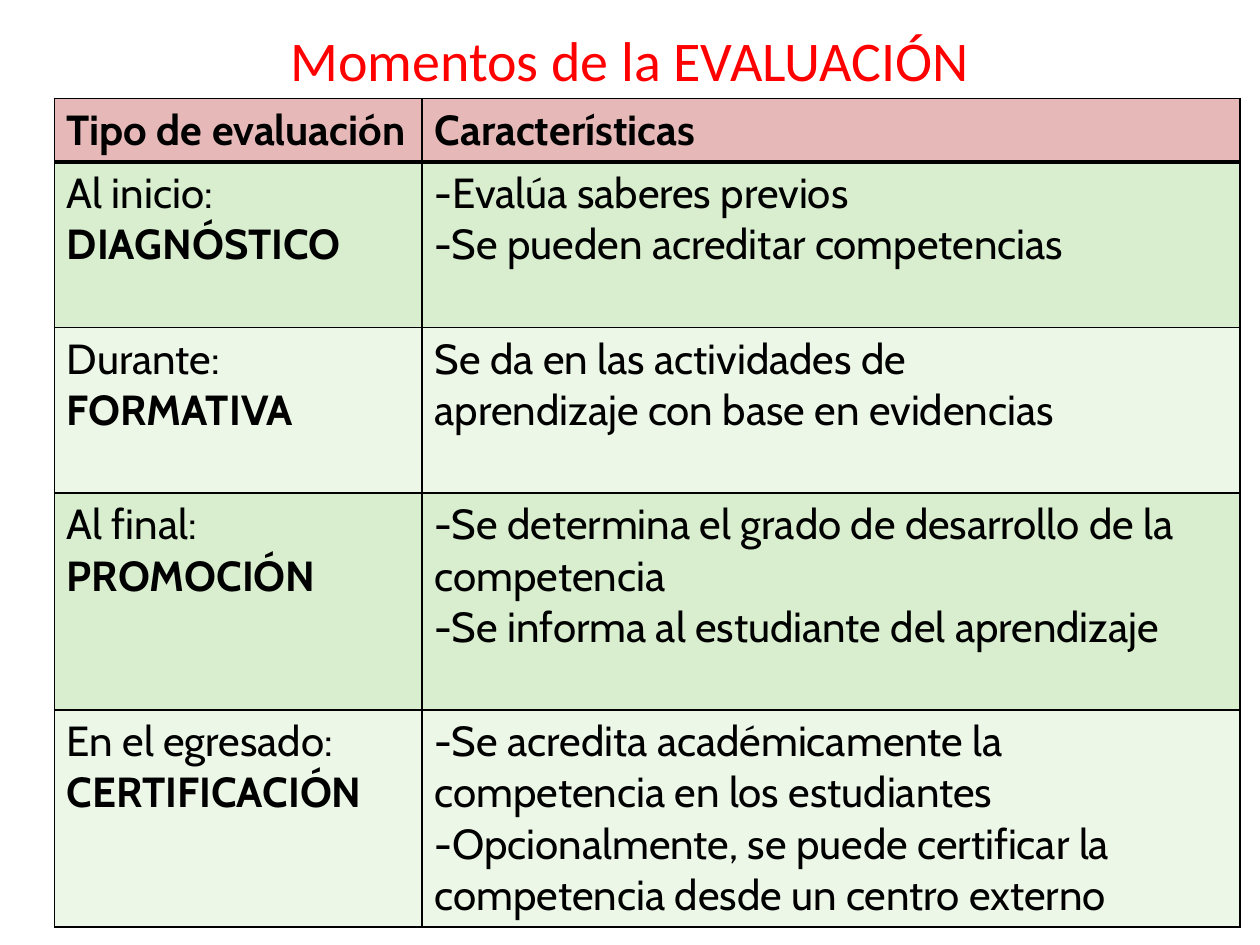
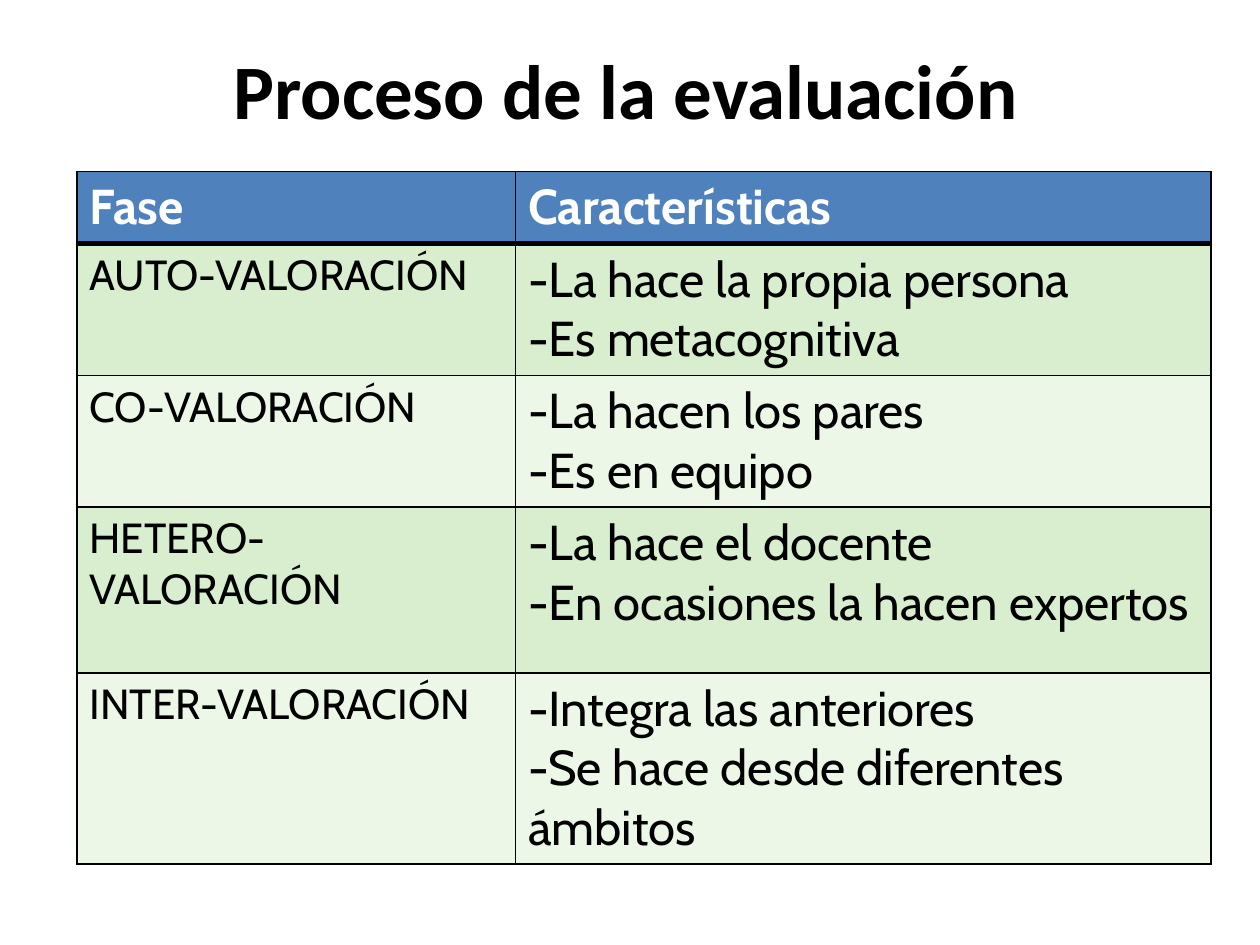
from dataclasses import dataclass

from lxml import etree
from pptx import Presentation
from pptx.dml.color import RGBColor
from pptx.enum.text import MSO_ANCHOR, MSO_AUTO_SIZE, PP_ALIGN
from pptx.oxml.ns import qn
from pptx.util import Pt

MIDDLE, TOP = MSO_ANCHOR.MIDDLE, MSO_ANCHOR.TOP
NO_FIT = MSO_AUTO_SIZE.NONE
LEFT, CENTER = PP_ALIGN.LEFT, PP_ALIGN.CENTER
TITLE_ONLY = 5


@dataclass(frozen=True)
class Theme:
    title_font: str = "Calibri"
    table_font: str = "Cabin"
    ink: str = "000000"
    white: str = "FFFFFF"
    red: str = "FF0000"
    pink: str = "E6B9B8"
    blue: str = "4F81BD"
    bands: tuple = ("D8EECE", "ECF7E8")
    small_title: int = 32
    large_title: int = 44
    small: int = 24
    large: int = 28
    thin: int = 1
    thick: int = 3


THEME = Theme()

MOMENTS = [
    (["Al inicio:", "*DIAGNÓSTICO"],
     ["-Evalúa saberes previos", "-Se pueden acreditar competencias"]),
    (["Durante:", "*FORMATIVA"],
     ["Se da en las actividades de", "aprendizaje con base en evidencias"]),
    (["Al final:", "*PROMOCIÓN"],
     ["-Se determina el grado de desarrollo de la competencia",
      "-Se informa al estudiante del aprendizaje"]),
    (["En el egresado:", "*CERTIFICACIÓN"],
     ["-Se acredita académicamente la competencia en los estudiantes",
      "-Opcionalmente, se puede certificar la competencia desde un centro externo"]),
]

PHASES = [
    (["AUTO-VALORACIÓN"], ["-La hace la propia persona", "-Es metacognitiva"]),
    (["CO-VALORACIÓN"], ["-La hacen los pares", "-Es en equipo"]),
    (["HETERO-VALORACIÓN"],
     ["-La hace el docente", "-En ocasiones la hacen expertos"]),
    (["INTER-VALORACIÓN"],
     ["-Integra las anteriores", "-Se hace desde diferentes ámbitos"]),
]


def add_run(p, text, font, size, color, bold):
    r = p.add_run()
    r.text = text
    r.font.name = font
    r.font.size = Pt(size)
    r.font.bold = bold
    r.font.color.rgb = RGBColor.from_string(color)


def set_title(slide, box, text, size, color, bold=False):
    sp = slide.shapes.title
    sp.left, sp.top, sp.width, sp.height = map(Pt, box)
    tf = sp.text_frame
    tf.word_wrap = True
    tf.auto_size = NO_FIT
    tf.vertical_anchor = MIDDLE
    p = tf.paragraphs[0]
    p.alignment = CENTER
    add_run(p, text, THEME.title_font, size, color, bold)


def set_borders(cell, top, bottom):
    """Draw the four edges; side edges are always thin."""
    tc_pr = cell._tc.get_or_add_tcPr()
    edges = [("L", THEME.thin), ("R", THEME.thin), ("T", top), ("B", bottom)]
    for i, (side, width) in enumerate(edges):
        ln = etree.Element(qn(f"a:ln{side}"), w=str(Pt(width)))
        fill = etree.SubElement(ln, qn("a:solidFill"))
        etree.SubElement(fill, qn("a:srgbClr"), val=THEME.ink)
        tc_pr.insert(i, ln)


def fill_cell(cell, lines, size, color, fill, bold=False):
    """Write one paragraph per line; a leading * makes the line bold."""
    cell.fill.solid()
    cell.fill.fore_color.rgb = RGBColor.from_string(fill)
    cell.vertical_anchor = TOP
    cell.margin_left = cell.margin_right = Pt(7.2)
    cell.margin_top = cell.margin_bottom = Pt(3.6)
    tf = cell.text_frame
    for i, line in enumerate(lines):
        p = tf.add_paragraph() if i else tf.paragraphs[0]
        p.alignment = LEFT
        add_run(p, line.removeprefix("*"), THEME.table_font, size, color,
                bold or line.startswith("*"))


def add_evaluation_table(slide, origin, widths, heights, headings, rows,
                         head_fill, head_color, head_size, body_sizes):
    left, top = origin
    frame = slide.shapes.add_table(len(heights), len(widths), Pt(left), Pt(top),
                                   Pt(sum(widths)), Pt(sum(heights)))
    table = frame.table
    for column, width in zip(table.columns, widths):
        column.width = Pt(width)
    for row, height in zip(table.rows, heights):
        row.height = Pt(height)

    for c, heading in enumerate(headings):
        cell = table.cell(0, c)
        fill_cell(cell, [heading], head_size, head_color, head_fill, bold=True)
        set_borders(cell, THEME.thin, THEME.thick)
    for r, row in enumerate(rows, start=1):
        band = THEME.bands[(r - 1) % 2]
        for c, (lines, size) in enumerate(zip(row, body_sizes)):
            cell = table.cell(r, c)
            fill_cell(cell, lines, size, THEME.ink, band)
            set_borders(cell, THEME.thick if r == 1 else THEME.thin, THEME.thin)


def add_moments_slide(prs):
    slide = prs.slides.add_slide(prs.slide_layouts[TITLE_ONLY])
    set_title(slide, (36, -11.5, 648, 90), "Momentos de la EVALUACIÓN",
              THEME.small_title, THEME.red)
    add_evaluation_table(
        slide, (31, 56.2), (210.2, 467.3), (36.4, 94.6, 94.6, 124, 124),
        ("Tipo de evaluación", "Características"), MOMENTS,
        THEME.pink, THEME.ink, THEME.small, (THEME.small, THEME.small))


def add_phases_slide(prs):
    slide = prs.slides.add_slide(prs.slide_layouts[TITLE_ONLY])
    set_title(slide, (33.8, 5.8, 648, 90), "Proceso de la evaluación",
              THEME.large_title, THEME.ink, bold=True)
    add_evaluation_table(
        slide, (44, 97.9), (250.6, 397.4), (41.4, 75.2, 75.2, 94.8, 109),
        ("Fase", "Características"), PHASES,
        THEME.blue, THEME.white, THEME.large, (THEME.small, THEME.large))


def main():
    prs = Presentation()
    prs.slide_width, prs.slide_height = Pt(720), Pt(540)
    add_moments_slide(prs)
    add_phases_slide(prs)
    prs.save("out.pptx")


if __name__ == "__main__":
    main()
